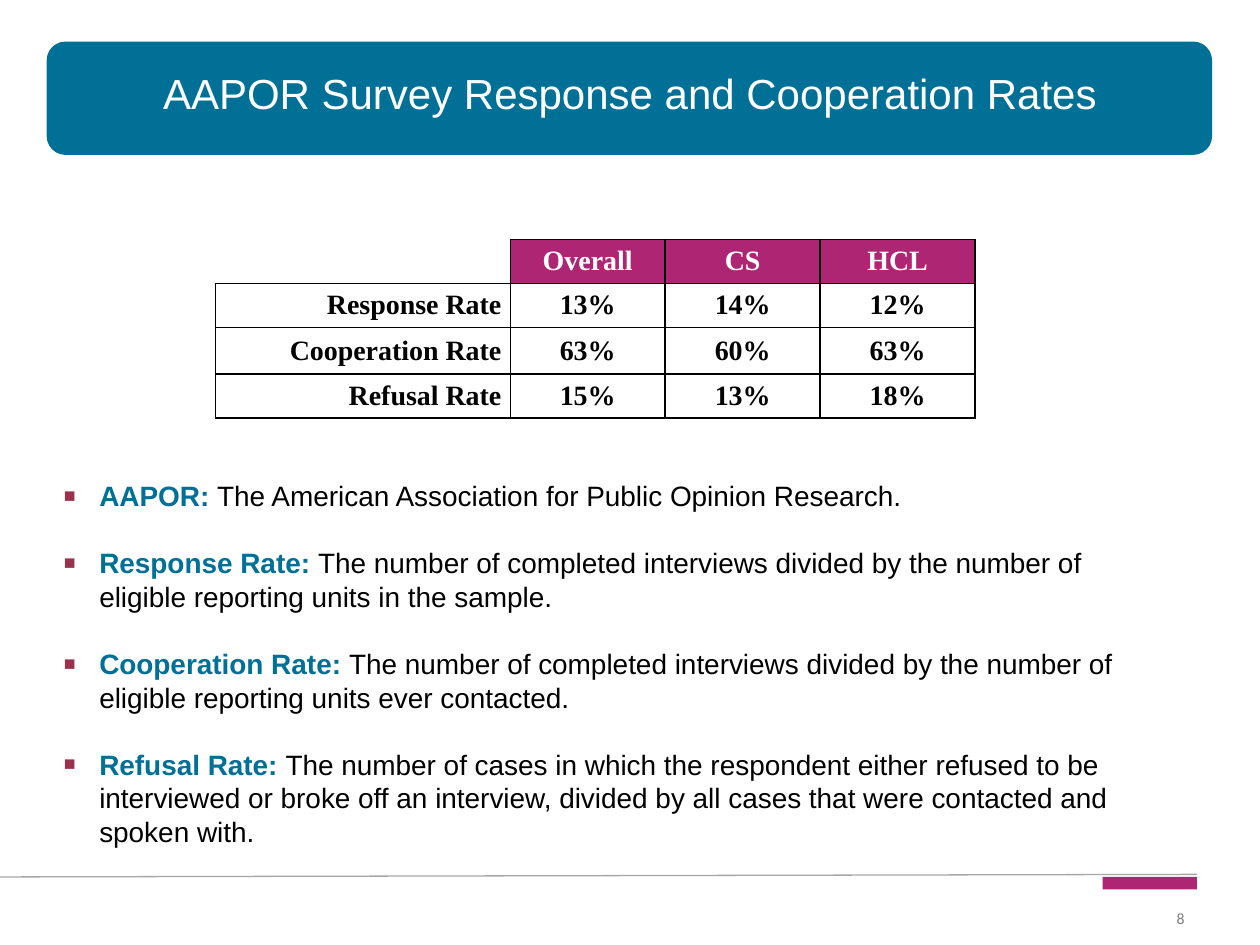
"""Build the survey response and cooperation rates slide."""
from dataclasses import dataclass

from lxml import etree
from pptx import Presentation
from pptx import util as u
from pptx.dml.color import RGBColor
from pptx.enum import shapes, text
from pptx.oxml import ns

WIDTH, HEIGHT = u.Inches(10), u.Inches(7.5)
TEAL = RGBColor(0x00, 0x70, 0x96)
MAGENTA = RGBColor(0xAE, 0x25, 0x73)
MAROON = RGBColor(0x98, 0x32, 0x4D)
RULE_GREY = RGBColor(0xA6, 0xA6, 0xA6)
NUMBER_GREY = RGBColor(0x7F, 0x7F, 0x7F)
WHITE = RGBColor(0xFF, 0xFF, 0xFF)
BLACK = RGBColor(0x00, 0x00, 0x00)
PLAIN_TABLE_STYLE = "{2D5ABB26-0587-4C30-8999-92F81FD0307C}"


@dataclass(frozen=True)
class Area:
    """A rectangle in percent of the slide's width and height."""
    left: float
    top: float
    width: float
    height: float

    def lengths(self) -> tuple:
        """Return left, top, width and height as lengths."""
        return across(self.left), down(self.top), across(self.width), down(self.height)


@dataclass(frozen=True)
class Style:
    """The look of one paragraph."""
    size: float
    font: str
    color: RGBColor
    bold: bool = False
    align: text.PP_ALIGN = text.PP_ALIGN.LEFT


@dataclass(frozen=True)
class Definition:
    """A term and its meaning."""
    term: str
    meaning: str


HEADER = ("", "Overall", "CS", "HCL")
RATES = (
    ("Response Rate", "13%", "14%", "12%"),
    ("Cooperation Rate", "63%", "60%", "63%"),
    ("Refusal Rate", "15%", "13%", "18%"),
)
COLUMN_SHARES = (23.4, 12.3, 12.3, 12.3)
ROW_SHARES = (7.33, 4.67, 4.67, 4.93, 4.53)
DEFINITIONS = (
    Definition("AAPOR", "The American Association for Public Opinion Research."),
    Definition("Response Rate", "The number of completed interviews divided by the number of "
               "eligible reporting units in the sample."),
    Definition("Cooperation Rate", "The number of completed interviews divided by the number of "
               "eligible reporting units ever contacted."),
    Definition("Refusal Rate", "The number of cases in which the respondent either refused to be "
               "interviewed or broke off an interview, divided by all cases that were contacted "
               "and spoken with."),
)


def across(percent: float) -> int:
    """Return a percentage of the slide's width."""
    return round(WIDTH * percent / 100)


def down(percent: float) -> int:
    """Return a percentage of the slide's height."""
    return round(HEIGHT * percent / 100)


def add_block(page, kind, area: Area, color: RGBColor) -> None:
    """Draw a plain filled shape."""
    block = page.shapes.add_shape(kind, *area.lengths())
    block.shadow.inherit = False
    block.fill.solid()
    block.fill.fore_color.rgb = color
    block.line.fill.background()


def add_rule(page) -> None:
    """Draw the thin footer line."""
    rule = page.shapes.add_connector(shapes.MSO_CONNECTOR.STRAIGHT, 0, down(92.8),
                                     across(95), down(92.53))
    rule.line.color.rgb = RULE_GREY
    rule.line.width = u.Pt(0.75)
    etree.SubElement(rule._element.spPr, ns.qn("a:effectLst"))


def add_frame(page, area: Area):
    """Add a wrapping text box and return its text frame."""
    frame = page.shapes.add_textbox(*area.lengths()).text_frame
    frame.word_wrap = True
    return frame


def style_paragraph(para, style: Style) -> None:
    """Apply a style to a whole paragraph."""
    para.alignment = style.align
    para.font.size = u.Pt(style.size)
    para.font.name = style.font
    para.font.bold = style.bold
    para.font.color.rgb = style.color


def write_line(frame, words: str, style: Style) -> None:
    """Write one styled line into a text frame."""
    para = frame.paragraphs[0]
    para.add_run().text = words
    style_paragraph(para, style)


def add_bullet(para) -> None:
    """Give a paragraph a hanging square bullet."""
    props = para._p.get_or_add_pPr()
    indent = u.Inches(0.28)
    props.set("marL", str(indent))
    props.set("indent", str(-indent))
    color = etree.SubElement(props, ns.qn("a:buClr"))
    etree.SubElement(color, ns.qn("a:srgbClr"), val=str(MAROON))
    etree.SubElement(props, ns.qn("a:buSzPct"), val="70000")
    etree.SubElement(props, ns.qn("a:buFont"), typeface="Arial")
    etree.SubElement(props, ns.qn("a:buChar"), char="■")


def add_definitions(page) -> None:
    """Write the bulleted definitions."""
    frame = add_frame(page, Area(4.1, 50, 90, 28.67))
    for index, item in enumerate(DEFINITIONS):
        para = frame.add_paragraph() if index else frame.paragraphs[0]
        para.space_after = u.Pt(19.2)
        add_bullet(para)
        style_paragraph(para, Style(16, "Arial", BLACK))
        span = para.add_run()
        span.text = f"{item.term}: "
        span.font.bold = True
        span.font.color.rgb = TEAL
        para.add_run().text = item.meaning


def add_borders(cell) -> None:
    """Draw black lines on all four sides of a cell."""
    props = cell._tc.get_or_add_tcPr()
    for side in ("lnL", "lnR", "lnT", "lnB"):
        line = etree.SubElement(props, ns.qn(f"a:{side}"), w=str(u.Pt(1)))
        fill = etree.SubElement(line, ns.qn("a:solidFill"))
        etree.SubElement(fill, ns.qn("a:srgbClr"), val=str(BLACK))


def fill_cell(cell, words: str, is_header: bool, is_label: bool) -> None:
    """Write and format one table cell."""
    add_borders(cell)
    cell.margin_left = cell.margin_right = u.Inches(0.07)
    cell.margin_top = cell.margin_bottom = u.Inches(0.04)
    cell.vertical_anchor = text.MSO_ANCHOR.MIDDLE
    if is_header:
        cell.fill.solid()
        cell.fill.fore_color.rgb = MAGENTA
    else:
        cell.fill.background()
    align = text.PP_ALIGN.RIGHT if is_label else text.PP_ALIGN.CENTER
    color = WHITE if is_header else BLACK
    write_line(cell.text_frame, words, Style(16, "Times New Roman", color, True, align))


def add_rates(page) -> None:
    """Draw the table of rates below an empty merged row."""
    area = Area(17.1, 18, sum(COLUMN_SHARES), sum(ROW_SHARES))
    holder = page.shapes.add_table(len(ROW_SHARES), len(COLUMN_SHARES), *area.lengths())
    table = holder.table
    table.first_row = table.horz_banding = False
    next(holder._element.iter(ns.qn("a:tableStyleId"))).text = PLAIN_TABLE_STYLE
    for column, share in zip(table.columns, COLUMN_SHARES):
        column.width = across(share)
    for row, share in zip(table.rows, ROW_SHARES):
        row.height = down(share)
    table.cell(0, 0).merge(table.cell(0, len(HEADER) - 1))
    for row, values in enumerate((HEADER, *RATES), start=1):
        for column, words in enumerate(values):
            cell = table.cell(row, column)
            if words:
                fill_cell(cell, words, row == 1, column == 0)
            else:
                cell.margin_top = cell.margin_bottom = 0


def main() -> None:
    """Build and save the deck."""
    deck = Presentation()
    deck.slide_width, deck.slide_height = WIDTH, HEIGHT
    page = deck.slides.add_slide(deck.slide_layouts[6])
    add_rule(page)
    number = add_frame(page, Area(57.3, 95.2, 37.7, 4))
    number.vertical_anchor = text.MSO_ANCHOR.MIDDLE
    write_line(number, "8", Style(9, "Calibri", NUMBER_GREY, align=text.PP_ALIGN.RIGHT))
    add_block(page, shapes.MSO_SHAPE.RECTANGLE, Area(87.5, 92.8, 7.5, 1.33), MAGENTA)
    add_block(page, shapes.MSO_SHAPE.ROUNDED_RECTANGLE, Area(3.7, 4.4, 92.5, 12), TEAL)
    write_line(add_frame(page, Area(5, 6.53, 90, 7.73)),
               "AAPOR Survey Response and Cooperation Rates",
               Style(24, "Arial", WHITE, align=text.PP_ALIGN.CENTER))
    add_definitions(page)
    add_rates(page)
    deck.save("out.pptx")


if __name__ == "__main__":
    main()
